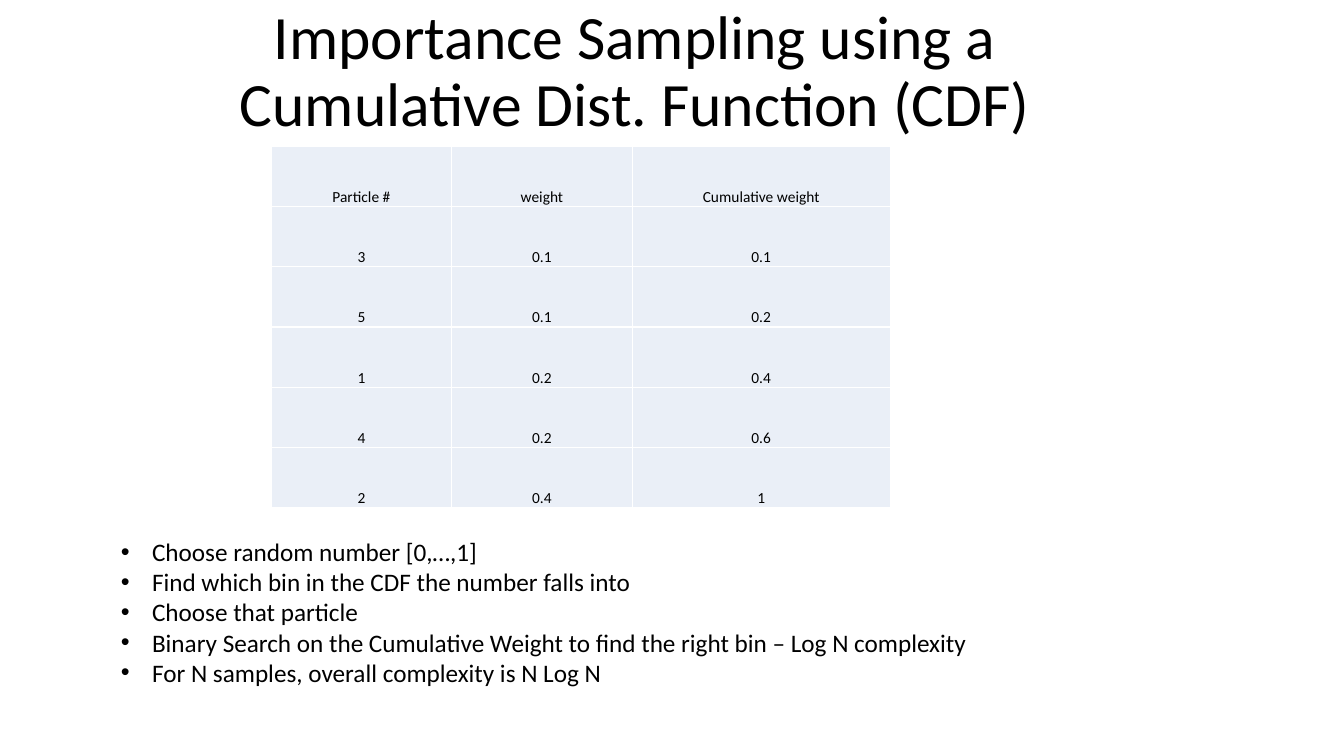
from lxml import etree
from pptx import Presentation
from pptx.dml.color import RGBColor
from pptx.enum.text import MSO_ANCHOR, MSO_AUTO_SIZE, PP_ALIGN
from pptx.oxml.ns import qn
from pptx.util import Inches, Pt

CENTER = PP_ALIGN.CENTER
MIDDLE, BOTTOM = MSO_ANCHOR.MIDDLE, MSO_ANCHOR.BOTTOM
GROW = MSO_AUTO_SIZE.SHAPE_TO_FIT_TEXT
COLORS = {"text": "000000", "cell": "EAEFF7", "border": "FFFFFF"}


def write(p, text, size):
    p.text = text
    for r in p.runs:
        for name, value in {"name": "Calibri", "size": Pt(size)}.items():
            setattr(r.font, name, value)
        r.font.color.rgb = RGBColor.from_string(COLORS["text"])


def add_border(tc_pr, side):
    ln = etree.SubElement(tc_pr, qn(f"a:ln{side}"), w=str(Pt(1)))
    fill = etree.SubElement(ln, qn("a:solidFill"))
    etree.SubElement(fill, qn("a:srgbClr"), val=COLORS["border"])


prs = Presentation()
prs.slide_width, prs.slide_height = Inches(13.33), Inches(7.5)
s = prs.slides.add_slide(prs.slide_layouts[6])

title = s.shapes.add_textbox(Inches(0.19), Inches(0), Inches(12.22), Inches(1.45))
tf = title.text_frame
tf.word_wrap = True
tf.vertical_anchor = MIDDLE
p = tf.paragraphs[0]
p.alignment = CENTER
p.line_spacing = 0.9
write(p, "Importance Sampling using a\vCumulative Dist. Function (CDF)", 44)

rows = [
    ("Particle #", "weight", "Cumulative weight"),
    ("3", "0.1", "0.1"),
    ("5", "0.1", "0.2"),
    ("1", "0.2", "0.4"),
    ("4", "0.2", "0.6"),
    ("2", "0.4", "1"),
]
widths = [1.79, 1.79, 2.56]
cell_format = {
    "vertical_anchor": BOTTOM,
    "margin_left": Inches(0.01),
    "margin_right": Inches(0.01),
    "margin_top": Inches(0.01),
    "margin_bottom": Inches(0),
}
table = s.shapes.add_table(
    len(rows), len(widths), Inches(2.69), Inches(1.45), Inches(sum(widths)), Inches(3.59)
).table
for column, width in zip(table.columns, widths):
    column.width = Inches(width)
for i, row in enumerate(rows):
    for j, text in enumerate(row):
        cell = table.cell(i, j)
        for name, value in cell_format.items():
            setattr(cell, name, value)
        for side in "LRTB":
            add_border(cell._tc.get_or_add_tcPr(), side)
        cell.fill.solid()
        cell.fill.fore_color.rgb = RGBColor.from_string(COLORS["cell"])
        p = cell.text_frame.paragraphs[0]
        p.alignment = CENTER
        write(p, text, 11)

steps = [
    "Choose random number [0,…,1]",
    "Find which bin in the CDF the number falls into",
    "Choose that particle",
    "Binary Search on the Cumulative Weight to find the right bin – Log N complexity",
    "For N samples, overall complexity is N Log N",
]
notes = s.shapes.add_textbox(Inches(1.1), Inches(5.27), Inches(9.76), Inches(1.62))
tf = notes.text_frame
tf.word_wrap = True
tf.auto_size = GROW
for i, step in enumerate(steps):
    p = tf.add_paragraph() if i else tf.paragraphs[0]
    write(p, step, 18)
    p_pr = p._p.get_or_add_pPr()
    p_pr.set("marL", str(Inches(0.31)))
    p_pr.set("indent", str(-Inches(0.31)))
    etree.SubElement(p_pr, qn("a:buFont"), typeface="Arial")
    etree.SubElement(p_pr, qn("a:buChar"), char="•")

prs.save("out.pptx")
